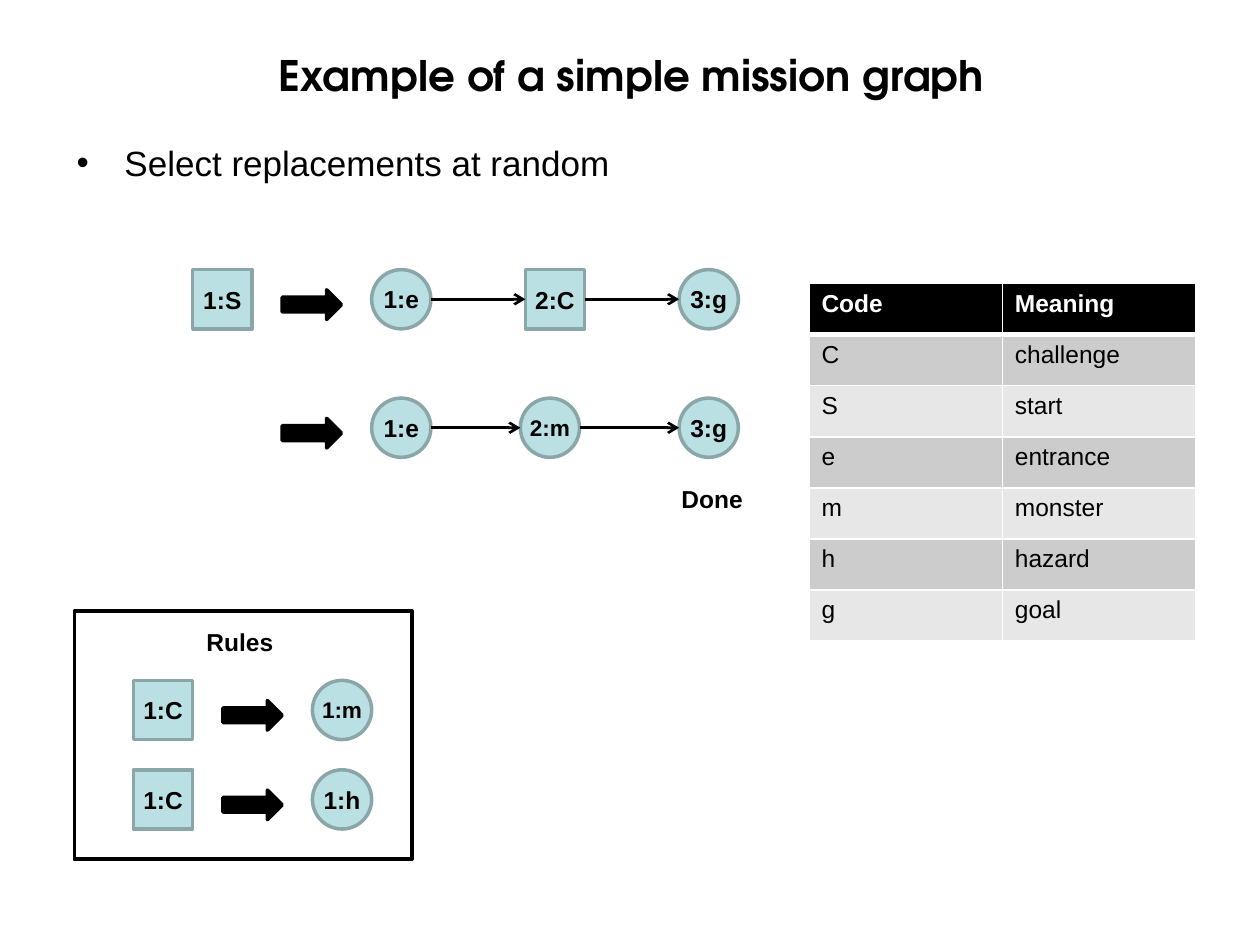
from lxml import etree
from pptx import Presentation
from pptx import util as u
from pptx.dml.color import RGBColor
from pptx.enum import shapes, text
from pptx.oxml.ns import qn

W, H = 10, 7.5
NODE = 0.47
STEP = 0.71
LINK = 1.22
COLORS = {
    "black": "000000",
    "white": "FFFFFF",
    "node": "BBE0E3",
    "edge": "8AA6A8",
    "odd": "CCCCCC",
    "even": "E7E7E7",
}
CODES = [
    ("Code", "Meaning"),
    ("C", "challenge"),
    ("S", "start"),
    ("e", "entrance"),
    ("m", "monster"),
    ("h", "hazard"),
    ("g", "goal"),
]


def rgb(name):
    return RGBColor.from_string(COLORS[name])


def box(*lengths):
    return [u.Inches(v) for v in lengths]


def write(tf, words, size=14, font="Arial", color="black", bold=True, align=None):
    p = tf.paragraphs[0]
    p.alignment = align
    r = p.add_run()
    r.text = words
    r.font.size = u.Pt(size)
    r.font.name = font
    r.font.bold = bold
    r.font.color.rgb = rgb(color)
    return p


def add_title(s, words):
    sp = s.shapes.title
    sp.left, sp.top, sp.width, sp.height = box(0.51, 0.29, 0.9 * W, 0.61)
    tf = sp.text_frame
    tf.vertical_anchor = text.MSO_ANCHOR.MIDDLE
    write(tf, words, size=24, font="TeX Gyre Adventor", align=text.PP_ALIGN.CENTER)


def add_bullet(s, words):
    tf = s.shapes.add_textbox(*box(0.51, 1.07, 0.9 * W, 0.94)).text_frame
    tf.word_wrap = True
    p = write(tf, words, size=20, bold=False)
    p.space_before = u.Pt(4)
    pPr = p._p.get_or_add_pPr()
    pPr.set("marL", str(u.Inches(0.38)))
    pPr.set("indent", str(u.Inches(-0.38)))
    etree.SubElement(pPr, qn("a:buFont")).set("typeface", "Arial")
    etree.SubElement(pPr, qn("a:buChar")).set("char", "•")


def add_label(s, words, x, y, w):
    tf = s.shapes.add_textbox(*box(x, y, w, 0.34)).text_frame
    tf.word_wrap = False
    write(tf, words)


def add_block(s, kind, x, y, w, h, fill=None, line="black"):
    sp = s.shapes.add_shape(kind, *box(x, y, w, h))
    sp.shadow.inherit = False
    if fill:
        sp.fill.solid()
        sp.fill.fore_color.rgb = rgb(fill)
    else:
        sp.fill.background()
    sp.line.color.rgb = rgb(line)
    sp.line.width = u.Pt(2)
    return sp


def add_node(s, words, x, y):
    kind = shapes.MSO_SHAPE.RECTANGLE if words[-1].isupper() else shapes.MSO_SHAPE.OVAL
    sp = add_block(s, kind, x, y, NODE, NODE, fill="node", line="edge")
    tf = sp.text_frame
    tf.margin_left = tf.margin_right = tf.margin_top = tf.margin_bottom = 0
    tf.vertical_anchor = text.MSO_ANCHOR.MIDDLE
    size = 12.9 if words.endswith("m") else 14
    write(tf, words, size=size, align=text.PP_ALIGN.CENTER)


def add_becomes(s, x, y):
    add_block(s, shapes.MSO_SHAPE.RIGHT_ARROW, x, y + 0.16, NODE, NODE / 2, fill="black")


def add_link(s, x1, x2, y):
    cx = s.shapes.add_connector(shapes.MSO_CONNECTOR.STRAIGHT, *box(x1, y, x2, y))
    cx.line.color.rgb = rgb("black")
    cx.line.width = u.Pt(1.5)
    etree.SubElement(cx.line._get_or_add_ln(), qn("a:tailEnd")).set("type", "arrow")
    etree.SubElement(cx._element.spPr, qn("a:effectLst"))


def add_chain(s, names, xs, y):
    for name, x in zip(names, xs):
        add_node(s, name, x, y)
    for x1, x2 in zip(xs, xs[1:]):
        add_link(s, x1 + NODE, x2, y + NODE / 2)


def add_rule(s, before, after, x, y):
    add_node(s, before, x, y)
    add_becomes(s, x + STEP, y)
    add_node(s, after, x + 2 * STEP, y)


def set_borders(cell, **widths):
    tcPr = cell._tc.get_or_add_tcPr()
    for i, (side, width) in enumerate(widths.items()):
        ln = etree.Element(qn("a:ln" + side), w=str(u.Pt(width)))
        fill = etree.SubElement(ln, qn("a:solidFill"))
        etree.SubElement(fill, qn("a:srgbClr")).set("val", COLORS["white"])
        tcPr.insert(i, ln)


def add_codes(s, rows):
    frame = s.shapes.add_table(len(rows), 2, *box(6.42, 2.25, 3.07, 2.84))
    for i, row in enumerate(rows):
        head = i == 0
        fill = "black" if head else "odd" if i % 2 else "even"
        for j, words in enumerate(row):
            cell = frame.table.cell(i, j)
            cell.fill.solid()
            cell.fill.fore_color.rgb = rgb(fill)
            set_borders(cell, L=1, R=1, T=3 if i == 1 else 1, B=3 if head else 1)
            write(cell.text_frame, words, color="white" if head else "black", bold=head)


def main():
    prs = Presentation()
    prs.slide_width, prs.slide_height = box(W, H)
    s = prs.slides.add_slide(prs.slide_layouts[5])
    add_title(s, "Example of a simple mission graph")
    add_bullet(s, "Select replacements at random")

    start, first, second = 1.53, 2.14, 3.16
    entry = start + 2 * STEP
    add_node(s, "1:S", start, first)
    for y, middle, shift in ((first, "2:C", 0), (second, "2:m", -0.04)):
        add_becomes(s, start + STEP, y)
        xs = [entry, entry + LINK + shift, entry + 2 * LINK]
        add_chain(s, ["1:e", middle, "3:g"], xs, y)
    add_label(s, "Done", 5.31, 3.79, 0.69)
    add_codes(s, CODES)

    add_block(s, shapes.MSO_SHAPE.RECTANGLE, 0.59, 4.85, 2.68, 1.97)
    add_label(s, "Rules", 1.54, 4.93, 0.73)
    for i, after in enumerate(("1:m", "1:h")):
        add_rule(s, "1:C", after, 1.06, 5.4 + i * STEP)
    prs.save("out.pptx")


if __name__ == "__main__":
    main()
